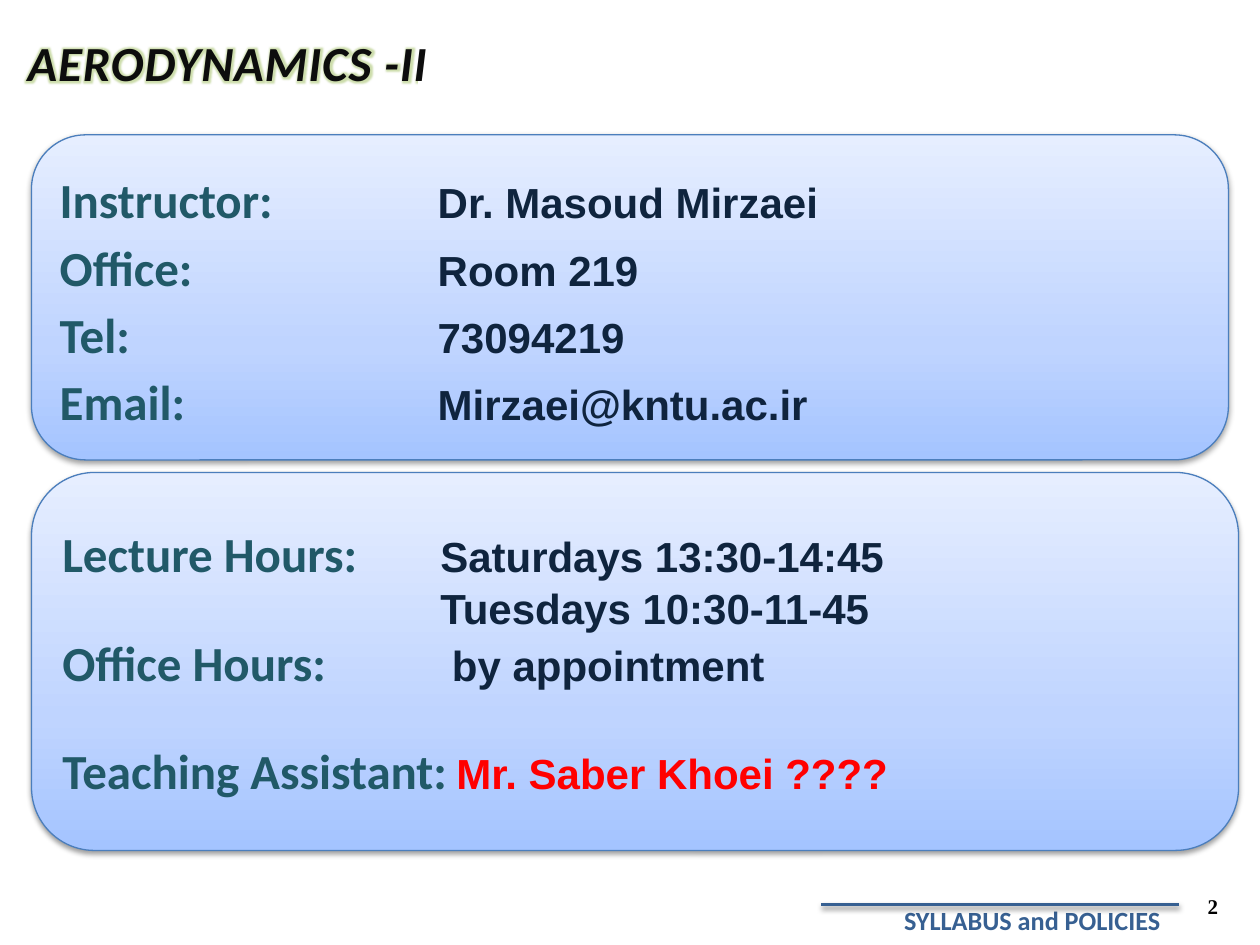
from lxml.etree import SubElement
from pptx import Presentation
from pptx.dml.color import RGBColor
from pptx.enum.shapes import MSO_CONNECTOR, MSO_SHAPE
from pptx.enum.text import MSO_ANCHOR, MSO_AUTO_SIZE, PP_ALIGN
from pptx.oxml import parse_xml
from pptx.oxml.ns import nsdecls, qn
from pptx.util import Inches, Pt


def rgb(code):
    return RGBColor.from_string(code)


def write(para, text, size=24, font="Arial", color="0F243E", bold=True, italic=False):
    run = para.add_run()
    run.text = text
    run.font.size = Pt(size)
    run.font.name = font
    run.font.bold = bold
    run.font.italic = italic
    run.font.color.rgb = rgb(color)
    return run


deck = Presentation()
deck.slide_width, deck.slide_height = Inches(10), Inches(7.5)
slide = deck.slides.add_slide(deck.slide_layouts[5])
shapes = slide.shapes

title = shapes.title
title.left, title.top = Inches(0.12), Inches(0.21)
title.width, title.height = Inches(8.74), Inches(0.57)
frame = title.text_frame
frame.auto_size = MSO_AUTO_SIZE.NONE
frame.vertical_anchor = MSO_ANCHOR.TOP
frame.paragraphs[0].alignment = PP_ALIGN.LEFT
run = write(frame.paragraphs[0], "AERODYNAMICS -II", size=28, font="Calibri",
            color="0D0D0D", italic=True)
props = run.font._element
props.set("spc", "50")
props.find(qn("a:solidFill")).addnext(parse_xml(
    f'<a:effectLst {nsdecls("a")}><a:glow rad="63500"><a:srgbClr val="9BBB59">'
    '<a:alpha val="50000"/></a:srgbClr></a:glow></a:effectLst>'))

notes = [
    ("2", 9.35, 6.99, 0.55, 0.4, PP_ALIGN.CENTER, MSO_ANCHOR.MIDDLE,
     dict(size=12, font="Times New Roman", color="000000")),
    ("SYLLABUS and POLICIES", 5.85, 7.13, 3.46, 0.35, PP_ALIGN.RIGHT, MSO_ANCHOR.TOP,
     dict(size=15, font="Calibri", color="376092")),
]
for text, left, top, width, height, align, anchor, style in notes:
    box = shapes.add_textbox(Inches(left), Inches(top), Inches(width), Inches(height))
    frame = box.text_frame
    frame.word_wrap = True
    frame.vertical_anchor = anchor
    frame.paragraphs[0].alignment = align
    write(frame.paragraphs[0], text, **style)

rule = shapes.add_connector(MSO_CONNECTOR.STRAIGHT, Inches(6.52), Inches(7.18),
                            Inches(9.36), Inches(7.18))
rule.line.color.rgb = rgb("376092")
rule.line.width = Pt(2)
shaded = [rule]

cards = [
    (1.07, 9.5, 2.58, 32, [
        ("Instructor:", "\t", "Dr. Masoud Mirzaei", "0F243E", 0),
        ("Office:", "\t", "Room 219", "0F243E", 0),
        ("Tel:", "\t", "73094219", "0F243E", 0),
        ("Email:", "\t", "Mirzaei@kntu.ac.ir", "0F243E", 0),
    ]),
    (3.75, 9.58, 3, 24, [
        ("Lecture Hours:", "\t", "Saturdays 13:30-14:45", "0F243E", 0),
        ("", "\t", "Tuesdays 10:30-11-45", "0F243E", 0),
        ("Office Hours:", "\t", " by appointment", "0F243E", 0),
        ("Teaching Assistant:", " ", "Mr. Saber Khoei ????", "FF0000", 28),
    ]),
]
stops = [(0, "A4C4FF"), (35, "BFD4FF"), (100, "E6EEFF")]
for top, width, height, gap, rows in cards:
    card = shapes.add_shape(MSO_SHAPE.ROUNDED_RECTANGLE, Inches(0.25), Inches(top),
                            Inches(width), Inches(height))
    card.fill.gradient()
    card.fill.gradient_angle = 90
    marks = card._element.spPr.find(qn("a:gradFill")).find(qn("a:gsLst"))
    marks.clear()
    for pos, code in stops:
        stop = SubElement(marks, qn("a:gs"), pos=str(pos * 1000))
        SubElement(stop, qn("a:srgbClr"), val=code)
    card.line.color.rgb = rgb("4B7EBC")
    card.line.width = Pt(0.75)
    shaded.append(card)

    frame = card.text_frame
    frame.word_wrap = True
    frame.vertical_anchor = MSO_ANCHOR.MIDDLE
    for index, (label, space, value, color, before) in enumerate(rows):
        para = frame.add_paragraph() if index else frame.paragraphs[0]
        tabs = SubElement(para._p.get_or_add_pPr(), qn("a:tabLst"))
        SubElement(tabs, qn("a:tab"), pos=str(Inches(3)), algn="l")
        para.alignment = PP_ALIGN.LEFT
        para.space_before = Pt(before)
        if label:
            write(para, label, size=28, font="Calibri", color="215968")
        write(para, space, size=gap, font="Calibri")
        write(para, value, color=color)

for shape in shaded:
    shape._element.spPr.append(parse_xml(
        f'<a:effectLst {nsdecls("a")}><a:outerShdw blurRad="{Pt(3.1)}" dist="{Pt(1.6)}" '
        'dir="5400000" rotWithShape="0"><a:srgbClr val="000000"><a:alpha val="38000"/>'
        '</a:srgbClr></a:outerShdw></a:effectLst>'))

deck.save("out.pptx")
